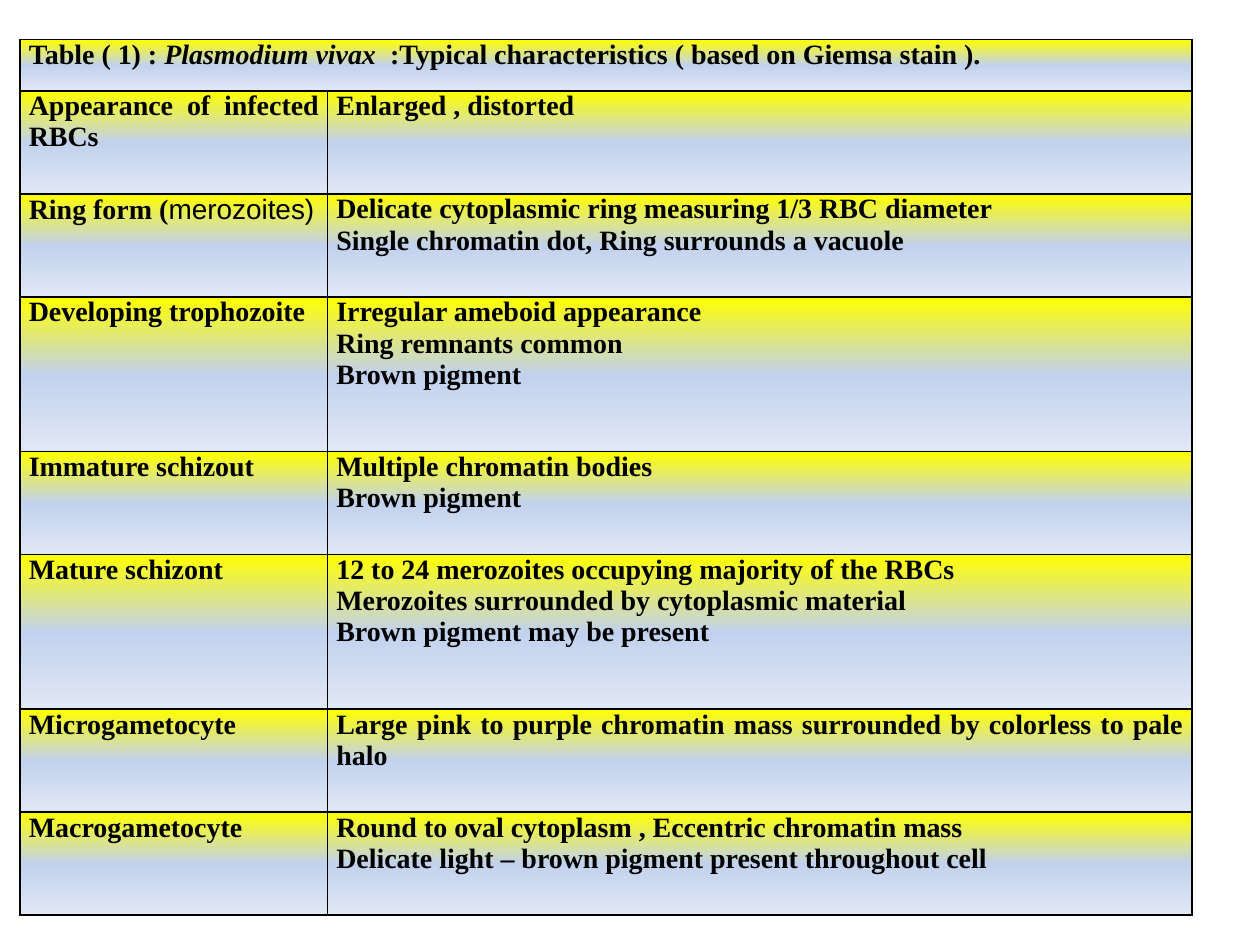
from lxml.etree import SubElement
from pptx import Presentation
from pptx.dml.color import RGBColor
from pptx.enum.text import PP_ALIGN as Align
from pptx.oxml.ns import qn
from pptx.util import Pt

STOPS = [(0, "FFFF00"), (50, "C2D1ED"), (100, "E1E8F5")]
UNIT = 29.44  # row heights are multiples of this

TITLE = "Table ( 1) : |Plasmodium vivax  |:Typical characteristics ( based on Giemsa stain )."
# Height in units, stage, description lines; "|" separates runs
ROWS = [
    (2, "Appearance of infected RBCs", ["Enlarged , distorted"]),
    (2, "Ring form (|merozoites)",
     ["Delicate cytoplasmic ring measuring 1/3 RBC diameter",
      "Single chromatin dot, Ring surrounds a vacuole"]),
    (3, "Developing trophozoite",
     ["Irregular ameboid appearance", "Ring remnants common", "Brown pigment"]),
    (2, "Immature schizout", ["Multiple chromatin bodies", "Brown pigment"]),
    (3, "Mature schizont",
     ["12 to 24 merozoites occupying majority of the RBCs",
      "Merozoites surrounded by cytoplasmic material",
      "Brown pigment may be present"]),
    (2, "Microgametocyte",
     ["Large pink to purple chromatin mass surrounded by colorless to pale halo"]),
    (2, "Macrogametocyte",
     ["Round to oval cytoplasm , Eccentric chromatin mass",
      "Delicate light – brown pigment present throughout cell"]),
]


def style_cell(cell):
    """Add black borders, then the vertical gradient, to a cell."""
    cell.margin_left = cell.margin_right = Pt(5)
    cell.margin_top = cell.margin_bottom = 0
    tc_pr = cell._tc.get_or_add_tcPr()
    for side in ("a:lnL", "a:lnR", "a:lnT", "a:lnB"):
        ln = SubElement(tc_pr, qn(side), w=str(Pt(1)))
        solid = SubElement(ln, qn("a:solidFill"))
        SubElement(solid, qn("a:srgbClr"), val="000000")
    grad = SubElement(tc_pr, qn("a:gradFill"), rotWithShape="1")
    stops = SubElement(grad, qn("a:gsLst"))
    for pos, color in STOPS:
        gs = SubElement(stops, qn("a:gs"), pos=str(pos * 1000))
        SubElement(gs, qn("a:srgbClr"), val=color)
    SubElement(grad, qn("a:lin"), ang=str(90 * 60000), scaled="0")


def write_cell(cell, lines):
    """Write justified paragraphs, splitting each line into runs at "|"."""
    tf = cell.text_frame
    for i, line in enumerate(lines):
        p = tf.paragraphs[0] if i == 0 else tf.add_paragraph()
        p.alignment = Align.JUSTIFY
        for text in line.split("|"):
            r = p.add_run()
            r.text = text
            r.font.name, r.font.size, r.font.bold = "Times New Roman", Pt(16), True
            r.font.color.rgb = RGBColor.from_string("000000")


prs = Presentation()
prs.slide_width, prs.slide_height = Pt(720), Pt(540)
s = prs.slides.add_slide(prs.slide_layouts[6])

# Table grid
units = [1] + [row[0] for row in ROWS]
table = s.shapes.add_table(len(units), 2, Pt(11.5), Pt(22.5),
                           Pt(669.6), Pt(UNIT * sum(units))).table
table.columns[0].width, table.columns[1].width = Pt(175.7), Pt(493.9)
for row, n in zip(table.rows, units):
    row.height = Pt(n * UNIT)
    for cell in row.cells:
        style_cell(cell)

# Title row across both columns
title = table.cell(0, 0)
title.merge(table.cell(0, 1))
write_cell(title, [TITLE])
title.text_frame.paragraphs[0].runs[1].font.italic = True

# Stages and their descriptions
for i, (_, stage, lines) in enumerate(ROWS, start=1):
    write_cell(table.cell(i, 0), [stage])
    write_cell(table.cell(i, 1), lines)

# The ring form's synonym is set in plain Arial
synonym = table.cell(2, 0).text_frame.paragraphs[0].runs[1].font
synonym.name, synonym.bold = "Arial", False

prs.save("out.pptx")
